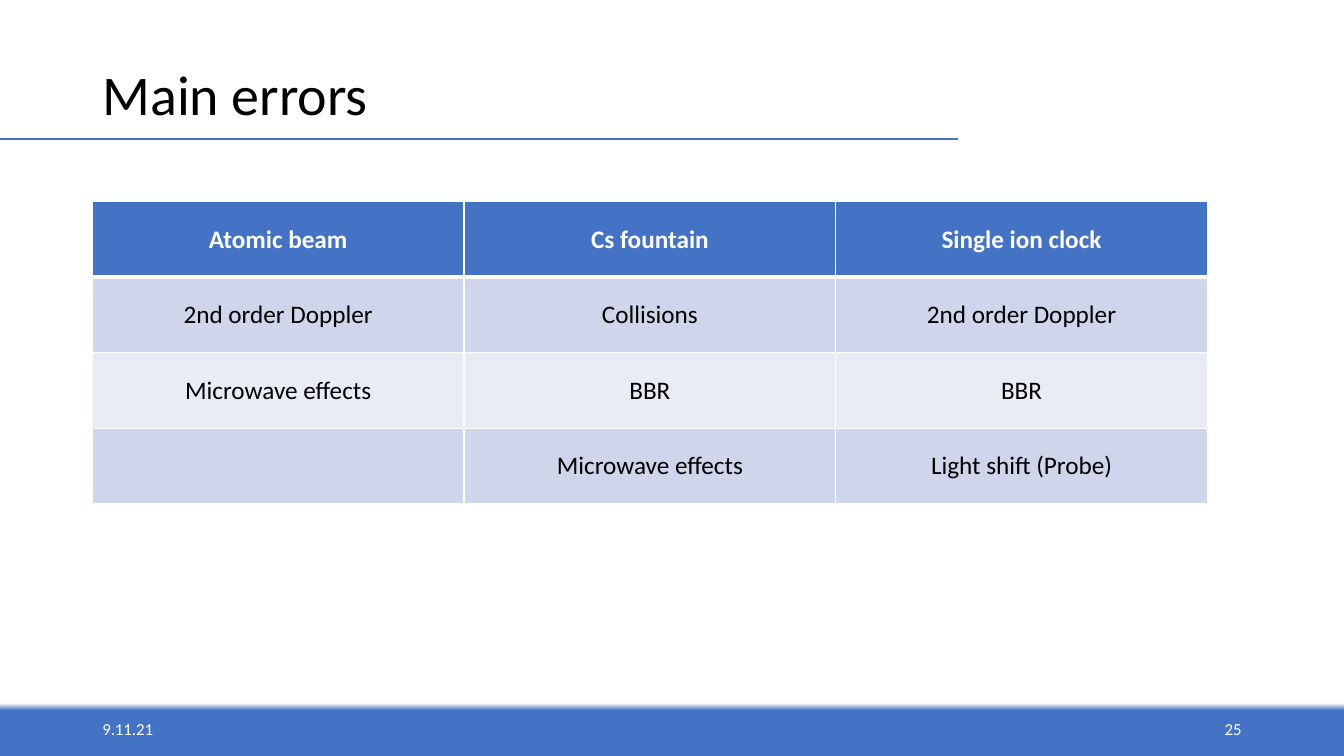
from dataclasses import dataclass

from lxml.etree import SubElement
from pptx import Presentation
from pptx.dml.color import RGBColor
from pptx.enum.shapes import MSO_CONNECTOR
from pptx.enum.text import MSO_ANCHOR, MSO_AUTO_SIZE, PP_ALIGN
from pptx.oxml.ns import qn
from pptx.slide import Slide
from pptx.table import _Cell
from pptx.text.text import TextFrame
from pptx.util import Emu, Pt

EMU_PER_PX = 9525
FONT = "Calibri"
BLACK = RGBColor(0x00, 0x00, 0x00)
WHITE = RGBColor(0xFF, 0xFF, 0xFF)
BLUE = RGBColor(0x44, 0x72, 0xC4)
BAND_DARK = RGBColor(0xCF, 0xD5, 0xEA)
BAND_LIGHT = RGBColor(0xE9, 0xEB, 0xF5)

MARGIN = 88
COLUMN_WIDTH, ROW_HEIGHT, TABLE_TOP = 354, 72, 192
ERROR_ROWS = [
    ("Atomic beam", "Cs fountain", "Single ion clock"),
    ("2nd order Doppler", "Collisions", "2nd order Doppler"),
    ("Microwave effects", "BBR", "BBR"),
    ("", "Microwave effects", "Light shift (Probe)"),
]


@dataclass(frozen=True)
class TextStyle:
    size: int
    color: RGBColor
    alignment: PP_ALIGN = PP_ALIGN.LEFT
    bold: bool = False


@dataclass(frozen=True)
class FooterItem:
    text: str
    left: int
    alignment: PP_ALIGN


TITLE_STYLE = TextStyle(40, BLACK)
HEADER_STYLE = TextStyle(18, WHITE, PP_ALIGN.CENTER, True)
BODY_STYLE = TextStyle(18, BLACK, PP_ALIGN.CENTER)
FOOTER_ITEMS = [
    FooterItem("9.11.21", MARGIN, PP_ALIGN.LEFT),
    FooterItem("25", 904, PP_ALIGN.RIGHT),
]


def px(length: int) -> Emu:
    return Emu(length * EMU_PER_PX)


def write_text(frame: TextFrame, text: str, style: TextStyle) -> None:
    paragraph = frame.paragraphs[0]
    paragraph.alignment = style.alignment
    run = paragraph.add_run()
    run.text = text
    run.font.name = FONT
    run.font.size = Pt(style.size)
    run.font.bold = style.bold
    run.font.color.rgb = style.color


def paint_background(slide: Slide) -> None:
    fill = slide.background.fill
    fill.gradient()
    fill.gradient_angle = 270
    for stop, position, color in zip(fill.gradient_stops, (0.93, 0.94), (WHITE, BLUE)):
        stop.position = position
        stop.color.rgb = color


def add_title(slide: Slide) -> None:
    title = slide.shapes.title
    title.left, title.top, title.width, title.height = map(px, (MARGIN, 23, 1104, 139))
    frame = title.text_frame
    frame.auto_size = MSO_AUTO_SIZE.NONE
    frame.vertical_anchor = MSO_ANCHOR.MIDDLE
    write_text(frame, "Main errors", TITLE_STYLE)
    frame.paragraphs[0].line_spacing = 0.9


def add_title_rule(slide: Slide) -> None:
    rule = slide.shapes.add_connector(
        MSO_CONNECTOR.STRAIGHT, px(0), px(132), px(912), px(132)
    )
    rule.line.color.rgb = BLUE
    rule.line.width = Pt(1.5)
    SubElement(rule._element.spPr, qn("a:effectLst"))


def set_borders(cell: _Cell, top: int, bottom: int) -> None:
    properties = cell._tc.get_or_add_tcPr()
    for side, width in (("L", 1), ("R", 1), ("T", top), ("B", bottom)):
        border = SubElement(properties, qn(f"a:ln{side}"), w=str(Pt(width)))
        solid = SubElement(border, qn("a:solidFill"))
        SubElement(solid, qn("a:srgbClr"), val=str(WHITE))


def add_error_table(slide: Slide) -> None:
    row_count, column_count = len(ERROR_ROWS), len(ERROR_ROWS[0])
    table = slide.shapes.add_table(
        row_count, column_count, px(MARGIN), px(TABLE_TOP),
        px(COLUMN_WIDTH * column_count), px(ROW_HEIGHT * row_count),
    ).table
    for row_index, texts in enumerate(ERROR_ROWS):
        is_header = row_index == 0
        band = BAND_DARK if row_index % 2 else BAND_LIGHT
        for column_index, text in enumerate(texts):
            cell = table.cell(row_index, column_index)
            set_borders(cell, 3 if row_index == 1 else 1, 3 if is_header else 1)
            cell.fill.solid()
            cell.fill.fore_color.rgb = BLUE if is_header else band
            cell.vertical_anchor = MSO_ANCHOR.MIDDLE
            if text:
                write_text(cell.text_frame, text, HEADER_STYLE if is_header else BODY_STYLE)


def add_footer_item(slide: Slide, item: FooterItem) -> None:
    box = slide.shapes.add_textbox(px(item.left), px(675), px(288), px(38))
    frame = box.text_frame
    frame.word_wrap = True
    frame.vertical_anchor = MSO_ANCHOR.MIDDLE
    write_text(frame, item.text, TextStyle(12, WHITE, item.alignment))


def main() -> None:
    presentation = Presentation()
    presentation.slide_width, presentation.slide_height = px(1280), px(720)
    slide = presentation.slides.add_slide(presentation.slide_layouts[5])

    # Background and heading
    paint_background(slide)
    add_title_rule(slide)
    add_title(slide)

    # Errors of each clock type
    add_error_table(slide)

    # Date and slide number
    for item in FOOTER_ITEMS:
        add_footer_item(slide, item)

    presentation.save("out.pptx")


if __name__ == "__main__":
    main()
